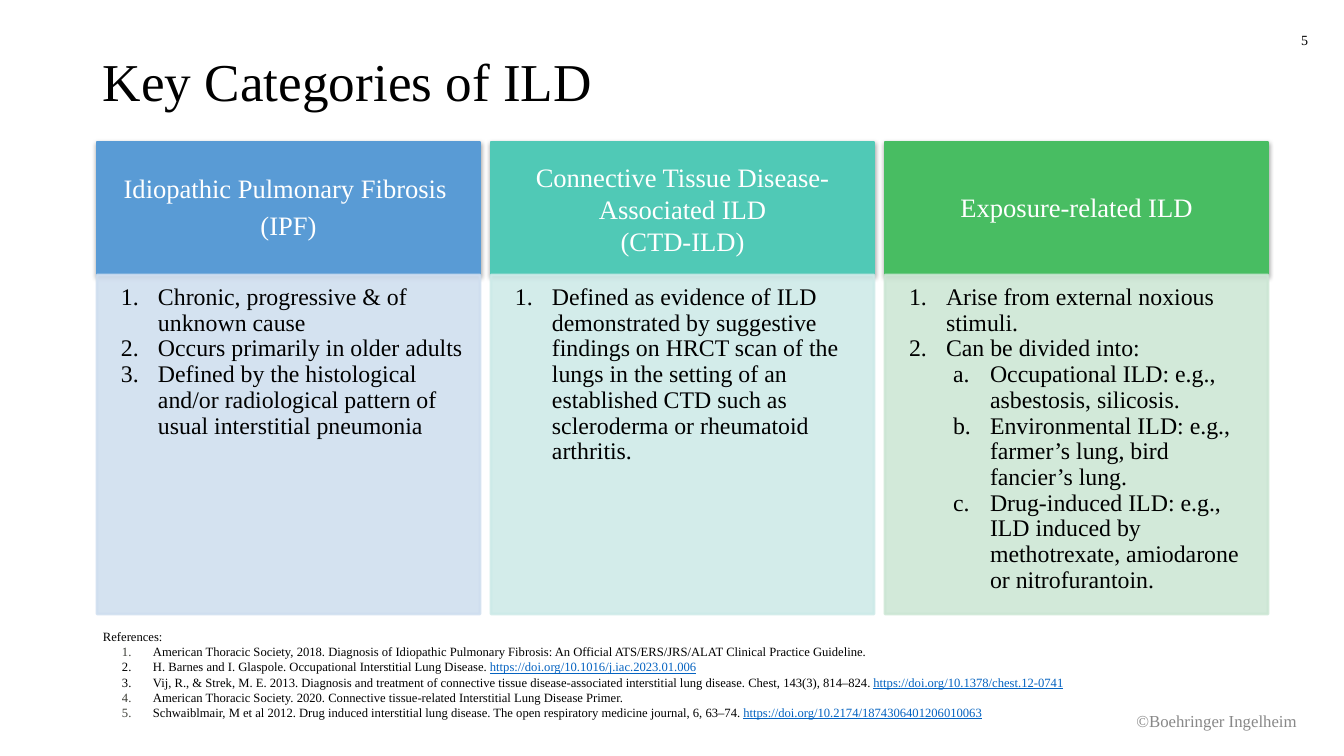
import pptx
import pptx.util
import pptx.dml.color
import pptx.enum.shapes
import pptx.enum.text
import pptx.oxml
import pptx.oxml.ns
from lxml import etree

FONT = "Times New Roman"
BLACK, WHITE, GREY, BLUE, DARK = "000000", "FFFFFF", "888888", "0563C1", "3C3D36"

TITLE = "Key Categories of ILD"
PAGE = "5"
OWNER = "©Boehringer Ingelheim"

# Header lines as (text, line spacing, space before); body as (level, text)
CARDS = [
    dict(head="599BD5", body="CFDEEF",
         lines=[("Idiopathic Pulmonary Fibrosis ", 0.9, 0), ("(IPF)", 0.9, 6)],
         items=[(0, "Chronic, progressive & of unknown cause"),
                (0, "Occurs primarily in older adults"),
                (0, "Defined by the histological and/or radiological pattern "
                    "of usual interstitial pneumonia")]),
    dict(head="50C9B6", body="CDEAE8",
         lines=[("Connective Tissue Disease-Associated ILD", 1.0, 0),
                ("(CTD-ILD)", 1.0, 0)],
         items=[(0, "Defined as evidence of ILD demonstrated by suggestive "
                    "findings on HRCT scan of the lungs in the setting of an "
                    "established CTD such as scleroderma or rheumatoid arthritis.")]),
    dict(head="48BD62", body="CCE6D4",
         lines=[("Exposure-related ILD", 0.9, 0)],
         items=[(0, "Arise from external noxious stimuli."),
                (0, "Can be divided into:"),
                (1, "Occupational ILD: e.g., asbestosis, silicosis."),
                (1, "Environmental ILD: e.g., farmer’s lung, bird fancier’s lung."),
                (1, "Drug-induced ILD: e.g., ILD induced by methotrexate, "
                    "amiodarone or nitrofurantoin.")]),
]

# References as (number colour, text, address)
REFS = [
    (DARK, "American Thoracic Society, 2018. Diagnosis of Idiopathic Pulmonary "
           "Fibrosis: An Official ATS/ERS/JRS/ALAT Clinical Practice Guideline.", ""),
    (BLACK, "H. Barnes and I. Glaspole. Occupational Interstitial Lung Disease. ",
     "https://doi.org/10.1016/j.iac.2023.01.006"),
    (BLACK, "Vij, R., & Strek, M. E. 2013. Diagnosis and treatment of connective "
            "tissue disease-associated interstitial lung disease. Chest, 143(3), "
            "814–824. ", "https://doi.org/10.1378/chest.12-0741"),
    (DARK, "American Thoracic Society. 2020. Connective tissue-related "
           "Interstitial Lung Disease Primer.", ""),
    (DARK, "Schwaiblmair, M et al 2012. Drug induced interstitial lung disease. "
           "The open respiratory medicine journal, 6, 63–74. ",
     "https://doi.org/10.2174/1874306401206010063"),
]

# Layout in px
LEFT, TOP, WIDE, STEP = 97, 142, 383, 394
HEAD, BODY = 133, 339

ALIGN = pptx.enum.text.PP_ALIGN
ANCHOR = pptx.enum.text.MSO_ANCHOR
SUB = pptx.oxml.ns.qn


def px(n):
    return pptx.util.Emu(round(n * 914400 / 100.8))


def tint(color, value):
    color.rgb = pptx.dml.color.RGBColor.from_string(value)


def style(run, size, color, under=None):
    run.font.name, run.font.size = FONT, pptx.util.Pt(size)
    run.font.underline = under
    tint(run.font.color, color)


def setup(shape, anchor, pads):
    frame = shape.text_frame
    frame.word_wrap, frame.vertical_anchor = True, anchor
    (frame.margin_left, frame.margin_top,
     frame.margin_right, frame.margin_bottom) = map(px, pads)
    return frame


def fill_par(frame, first, text, size, color, align=ALIGN.LEFT, lead=1.0, gap=0):
    par = frame.paragraphs[0] if first else frame.add_paragraph()
    par.text = text
    par.alignment, par.line_spacing = align, lead
    par.space_before = pptx.util.Pt(gap)
    style(par.runs[0], size, color)
    return par


def number(par, kind, color, left, hang):
    props = par._p.get_or_add_pPr()
    props.set("marL", str(px(left)))
    props.set("indent", str(-px(hang)))
    tone = etree.SubElement(props, SUB("a:buClr"))
    etree.SubElement(tone, SUB("a:srgbClr"), val=color)
    etree.SubElement(props, SUB("a:buAutoNum"), type=kind)


def label(box, text, size, color, align, lead=1.0):
    shape = slide.shapes.add_textbox(*map(px, box))
    frame = setup(shape, ANCHOR.MIDDLE, (10, 5, 10, 5))
    fill_par(frame, True, text, size, color, align, lead)


def panel(box, color):
    shape = slide.shapes.add_shape(
        pptx.enum.shapes.MSO_SHAPE.RECTANGLE, *map(px, box))
    shape.shadow.inherit = False
    shape.fill.solid()
    tint(shape.fill.fore_color, color)
    tint(shape.line.color, color)
    shape.line.width = pptx.util.Pt(2)
    return shape


def shade(shape):
    effects = shape._element.spPr.find(SUB("a:effectLst"))
    pt = pptx.util.Pt
    drop = etree.SubElement(effects, SUB("a:outerShdw"), blurRad=str(pt(3.1)),
                            dist=str(pt(1.6)), dir="5400000", rotWithShape="0")
    tone = etree.SubElement(drop, SUB("a:srgbClr"), val=BLACK)
    etree.SubElement(tone, SUB("a:alpha"), val="35000")


def fade(shape):
    for tone in shape._element.spPr.iter(SUB("a:srgbClr")):
        etree.SubElement(tone, SUB("a:alpha"), val="88000")


deck = pptx.Presentation()
deck.slide_width, deck.slide_height = px(1344), px(756)
slide = deck.slides.add_slide(deck.slide_layouts[6])

# Page number, owner and title
label((1279, 15, 51, 50), PAGE, 10, BLACK, ALIGN.CENTER)
label((854, 701, 453, 40), OWNER, 12, GREY, ALIGN.RIGHT)
label((93, 40, 1159, 88), TITLE, 38, BLACK, ALIGN.LEFT, 0.9)

# Three category cards
for col, card in enumerate(CARDS):
    x = LEFT + col * STEP
    head = panel((x, TOP, WIDE, HEAD), card["head"])
    shade(head)
    frame = setup(head, ANCHOR.MIDDLE, (13, 8, 13, 8))
    for row, (text, lead, gap) in enumerate(card["lines"]):
        fill_par(frame, row == 0, text, 19, WHITE, ALIGN.CENTER, lead, gap)

    body = panel((x, TOP + HEAD, WIDE, BODY), card["body"])
    fade(body)
    frame = setup(body, ANCHOR.TOP, (10, 10, 13, 15))
    for row, (level, text) in enumerate(card["items"]):
        par = fill_par(frame, row == 0, text, 17, BLACK, lead=0.9)
        par.level = level
        kind = ("arabicPeriod", "alphaLcPeriod")[level]
        number(par, kind, BLACK, 51 + 44 * level, 37)

# References
notes = slide.shapes.add_textbox(*map(px, (93, 624, 1116, 102)))
frame = setup(notes, ANCHOR.TOP, (10, 5, 10, 5))
fill_par(frame, True, "References:", 9, BLACK)
for color, text, link in REFS:
    par = fill_par(frame, False, text, 9, BLACK)
    number(par, "arabicPeriod", color, 50, 31)
    if link:
        run = par.add_run()
        run.text = link
        style(run, 9, BLUE, True)

deck.save("out.pptx")
